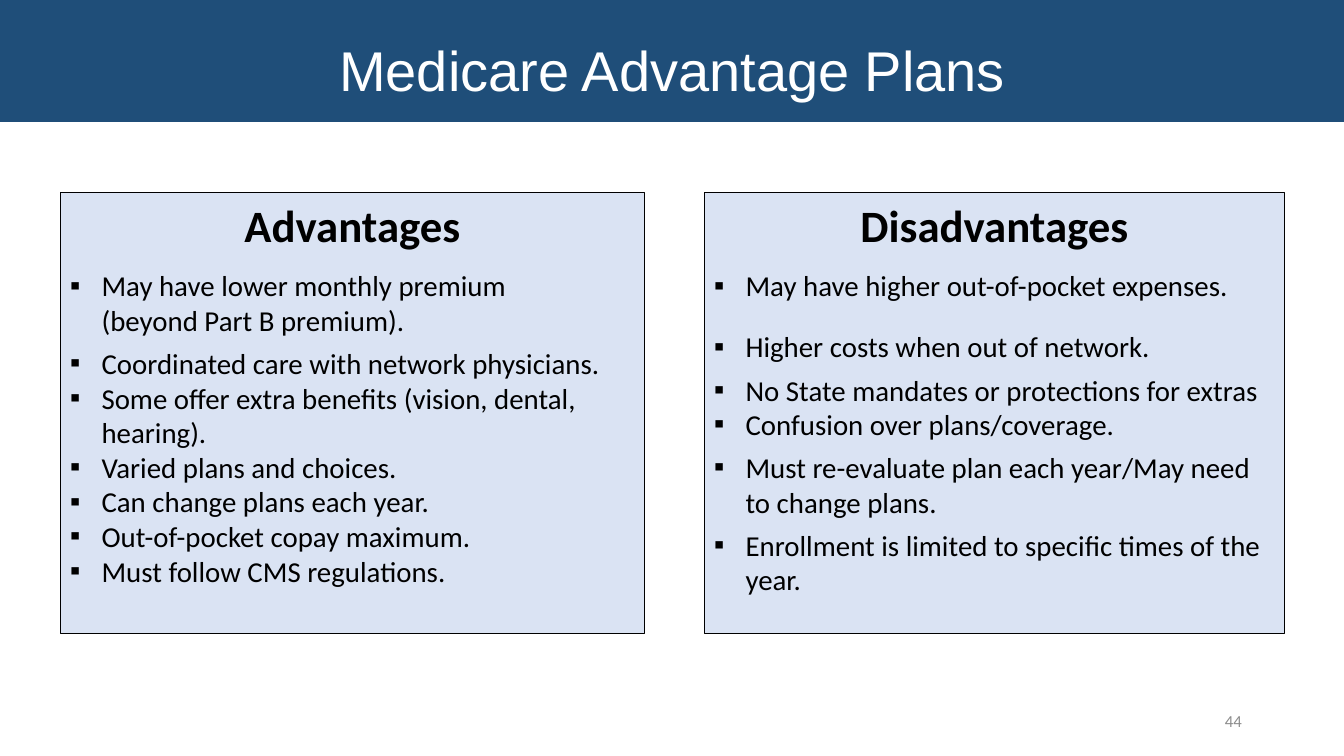
"""Build the Medicare Advantage Plans comparison slide."""
from dataclasses import dataclass

from lxml import etree
from pptx import Presentation
from pptx.dml.color import RGBColor
from pptx.enum.shapes import MSO_SHAPE
from pptx.enum.text import MSO_ANCHOR, PP_ALIGN
from pptx.oxml.ns import qn
from pptx.util import Cm, Pt

RECTANGLE = MSO_SHAPE.RECTANGLE
TOP, MIDDLE = MSO_ANCHOR.TOP, MSO_ANCHOR.MIDDLE
LEFT, CENTER, RIGHT = PP_ALIGN.LEFT, PP_ALIGN.CENTER, PP_ALIGN.RIGHT


@dataclass(frozen=True)
class Theme:
    """Colours, fonts and type sizes of the slide."""
    band: str = "1F4E79"
    panel: str = "DAE3F3"
    ink: str = "000000"
    light: str = "FFFFFF"
    muted: str = "8C8C8C"
    title_font: str = "Arial"
    body_font: str = "Calibri"
    title_size: float = 40
    heading_size: float = 32
    body_size: float = 20.6
    number_size: float = 12


ADVANTAGES = [
    ("May have lower monthly premium \v(beyond Part B premium).", 6),
    ("Coordinated care with network physicians.", 0),
    ("Some offer extra benefits (vision, dental, hearing).", 0),
    ("Varied plans and choices.", 0),
    ("Can change plans each year.", 0),
    ("Out-of-pocket copay maximum.", 0),
    ("Must follow CMS regulations.", 0),
]
DISADVANTAGES = [
    ("May have higher out-of-pocket expenses.", 19),
    ("Higher costs when out of network.", 6),
    ("No State mandates or protections for extras", 0),
    ("Confusion over plans/coverage.", 6),
    ("Must re-evaluate plan each year/May need to change plans.", 6),
    ("Enrollment is limited to specific times of the year.", 6),
]


def write(p, text, *, font, size, color, bold=False, align=LEFT, after=0, bullet=None):
    """Fill a paragraph with formatted text and an optional bullet."""
    p.text = text
    p.alignment = align
    p.space_after = Pt(after)
    for r in p.runs:
        r.font.name = font
        r.font.size = Pt(size)
        r.font.bold = bold
        r.font.color.rgb = RGBColor.from_string(color)
    if bullet:
        pPr = p._p.get_or_add_pPr()
        pPr.set("marL", str(Cm(0.79)))
        pPr.set("indent", str(-Cm(0.79)))
        etree.SubElement(pPr, qn("a:buFont")).set("typeface", font)
        etree.SubElement(pPr, qn("a:buChar")).set("char", bullet)


class SlideBuilder:
    """Hold the theme and the current slide."""

    def __init__(self, slide, theme):
        """Keep the slide and its theme."""
        self.slide = slide
        self.theme = theme

    def box(self, left, top, width, height, fill, line=None):
        """Add a flat rectangle and return its text frame."""
        sp = self.slide.shapes.add_shape(
            RECTANGLE, Cm(left), Cm(top), Cm(width), Cm(height))
        sp.shadow.inherit = False
        sp.fill.solid()
        sp.fill.fore_color.rgb = RGBColor.from_string(fill)
        if line:
            sp.line.color.rgb = RGBColor.from_string(line)
            sp.line.width = Pt(0.75)
        else:
            sp.line.fill.background()
        tf = sp.text_frame
        tf.word_wrap = True
        tf.vertical_anchor = TOP
        return tf

    def title(self, text):
        """Add the title band across the top."""
        t = self.theme
        tf = self.box(0, 0, 33.87, 3.07, t.band)
        tf.margin_top = Cm(0.89)
        write(tf.paragraphs[0], text, font=t.title_font, size=t.title_size,
              color=t.light, align=CENTER)

    def panel(self, left, width, heading, items):
        """Add a headed panel of bulleted items."""
        t = self.theme
        tf = self.box(left, 4.85, width, 11.12, t.panel, t.ink)
        write(tf.paragraphs[0], heading, font=t.body_font, size=t.heading_size,
              color=t.ink, bold=True, align=CENTER, after=12)
        for text, after in items:
            write(tf.add_paragraph(), text, font=t.body_font, size=t.body_size,
                  color=t.ink, after=after, bullet="▪")

    def page_number(self, text):
        """Add the page number at the lower right."""
        t = self.theme
        tf = self.slide.shapes.add_textbox(
            Cm(23.93), Cm(17.65), Cm(7.62), Cm(1.02)).text_frame
        tf.word_wrap = True
        tf.vertical_anchor = MIDDLE
        write(tf.paragraphs[0], text, font=t.body_font, size=t.number_size,
              color=t.muted, align=RIGHT)


def main():
    """Create and save the presentation."""
    prs = Presentation()
    prs.slide_width, prs.slide_height = Cm(33.87), Cm(19.05)
    s = SlideBuilder(prs.slides.add_slide(prs.slide_layouts[6]), Theme())
    s.title("Medicare Advantage Plans")
    s.panel(1.52, 14.73, "Advantages", ADVANTAGES)
    s.panel(17.75, 14.63, "Disadvantages", DISADVANTAGES)
    s.page_number("44")
    prs.save("out.pptx")


if __name__ == "__main__":
    main()
